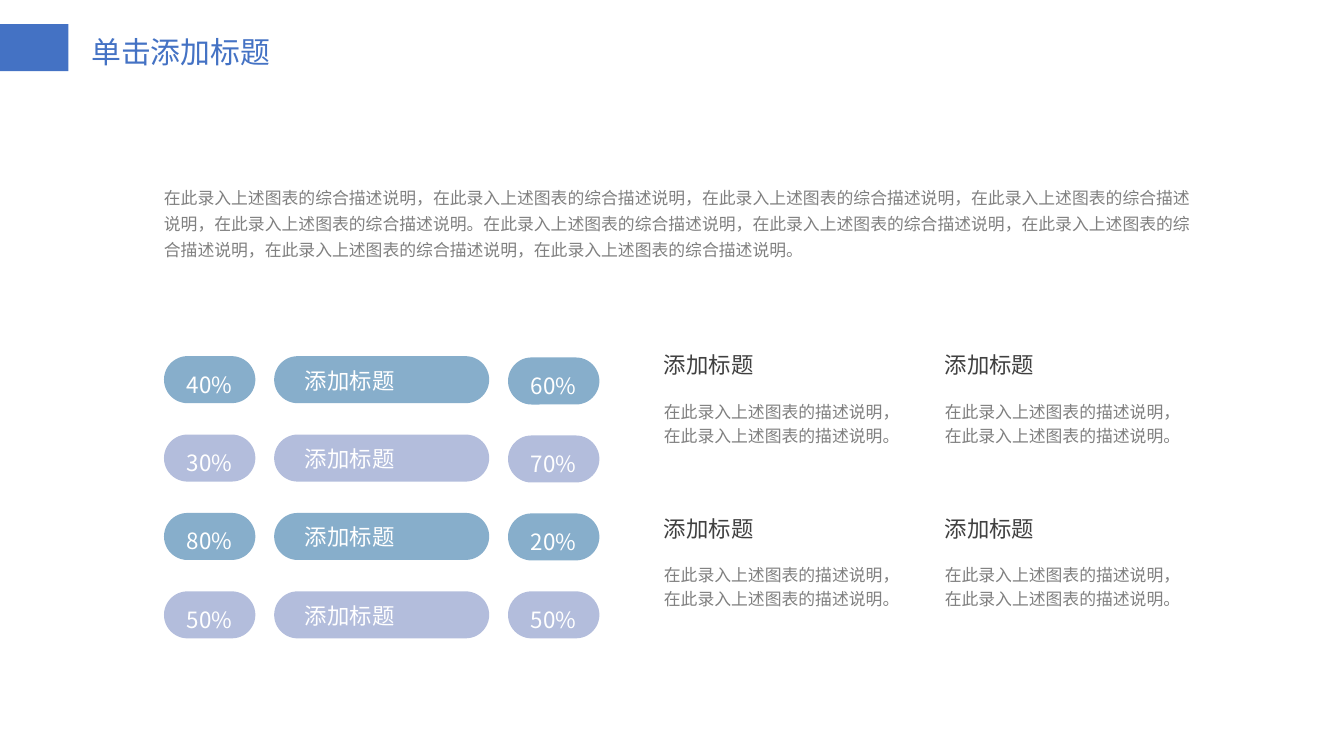
from dataclasses import dataclass
from lxml.etree import SubElement
from pptx import Presentation
from pptx.dml.color import RGBColor as RGB
from pptx.enum.shapes import MSO_SHAPE as Shape
from pptx.enum.text import MSO_AUTO_SIZE as Fit, PP_ALIGN as Align
from pptx.oxml.ns import qn
from pptx.util import Inches, Pt


@dataclass(frozen=True)
class Theme:
    font: str = "Noto Sans CJK SC"
    accent: str = "4472C4"
    blue: str = "87AECB"
    lilac: str = "B3BDDC"
    white: str = "FFFFFF"
    dark: str = "404040"
    gray: str = "808080"
    title: int = 16
    head: int = 12
    body: int = 9


THEME = Theme()
TITLE = "单击添加标题"
CLAUSE = "在此录入上述图表的综合描述说明"
SUMMARY = ("，".join([CLAUSE] * 5) + "。") * 2
ROWS = [
    ("40%", "添加标题", "60%"),
    ("30%", "添加标题", "70%"),
    ("80%", "添加标题", "20%"),
    ("50%", "添加标题", "50%"),
]
NOTE = "在此录入上述图表的描述说明，在此录入上述图表的描述说明。"
CARDS = [("添加标题", NOTE)] * 4

WIDE, NARROW = (0.1, 0.05), (0.07, 0.04)
LEFT_TOP, RIGHT_TOP, ROW_END, PILL = 2.65, 2.66, 4.4, 0.35
CARD_X = [(4.87, 1.96), (6.96, 1.94)]
CARD_Y = [(2.57, 2.92), (3.79, 4.13)]


def add_bar(parent, kind, box, color):
    """Add a plain filled shape."""
    bar = parent.shapes.add_shape(kind, *map(Inches, box))
    bar.shadow.inherit = False
    bar.fill.solid()
    bar.fill.fore_color.rgb = RGB.from_string(color)
    bar.line.fill.background()
    return bar


def add_pill(parent, box, color):
    """Add a bar with fully rounded ends."""
    add_bar(parent, Shape.ROUNDED_RECTANGLE, box, color).adjustments[0] = 0.5


def add_text(parent, box, text, size, color, inset=NARROW, gap=None,
             align=None, wrap=True):
    """Add a one-paragraph text box."""
    frame = parent.shapes.add_textbox(*map(Inches, box)).text_frame
    frame.word_wrap = wrap
    frame.auto_size = Fit.SHAPE_TO_FIT_TEXT
    frame.margin_left = frame.margin_right = Inches(inset[0])
    frame.margin_top = frame.margin_bottom = Inches(inset[1])
    para = frame.paragraphs[0]
    para.alignment = align
    para.line_spacing = gap
    run = para.add_run()
    run.text = text
    run.font.size = Pt(size)
    run.font.name = THEME.font
    run.font.color.rgb = RGB.from_string(color)
    SubElement(run._r.get_or_add_rPr(), qn("a:ea")).set("typeface", THEME.font)


def add_row(slide, part, row, color):
    """Add a label pill with a value pill on each side."""
    left, label, right = row
    top, side = (y + (ROW_END - y) * part for y in (LEFT_TOP, RIGHT_TOP))
    group = slide.shapes.add_group_shape()
    ends = [(1.22, top, left), (3.78, side, right)]
    add_pill(group, (2.04, top, 1.6, PILL), color)
    for x, y, value in ends:
        add_pill(group, (x, y, 0.68, PILL), color)
    add_text(group, (2.17, top + 0.03, 1.35, 0.3), label, THEME.head,
             THEME.white, WIDE)
    for x, y, value in ends:
        add_text(group, (x, y + 0.02, 0.68, 0.34), value, THEME.head,
                 THEME.white, WIDE, 1.2, Align.CENTER)


def main():
    """Build the slide and save it."""
    deck = Presentation()
    deck.slide_width = Inches(10)
    deck.slide_height = deck.slide_width * 9 // 16
    slide = deck.slides.add_slide(deck.slide_layouts[6])
    fill = slide.background.fill
    fill.solid()
    fill.fore_color.rgb = RGB.from_string(THEME.white)

    add_bar(slide, Shape.RECTANGLE, (0, 0.18, 0.51, 0.35), THEME.accent)
    add_text(slide, (0.6, 0.21, 1.5, 0.35), TITLE, THEME.title, THEME.accent,
             (0.08, 0.04), wrap=False)

    for i, row in enumerate(ROWS):
        color = (THEME.blue, THEME.lilac)[i % 2]
        add_row(slide, i / (len(ROWS) - 1), row, color)

    add_text(slide, (1.15, 1.31, 7.8, 0.67), SUMMARY, THEME.body, THEME.gray,
             gap=1.3)
    for i, (head, note) in enumerate(CARDS):
        x, width = CARD_X[i % 2]
        top, below = CARD_Y[i // 2]
        add_text(slide, (x, top, 1.27, 0.28), head, THEME.head, THEME.dark)
        add_text(slide, (x, below, width, 0.44), note, THEME.body,
                 THEME.gray, gap=1.2)

    deck.save("out.pptx")


if __name__ == "__main__":
    main()
